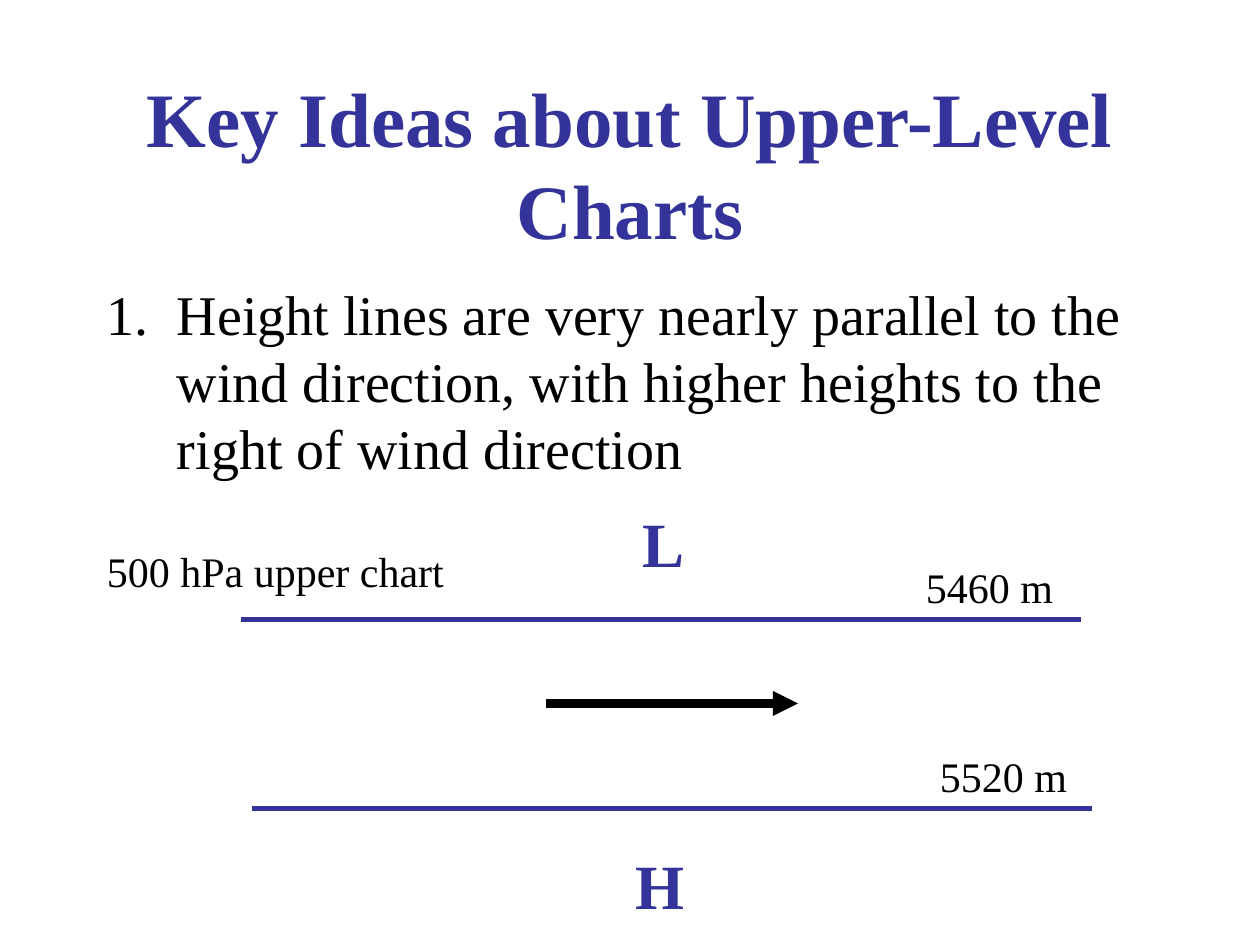
"""Build the slide on key ideas about upper-level charts."""
from dataclasses import dataclass

import lxml.etree
import pptx
import pptx.dml.color
import pptx.enum.shapes
import pptx.enum.text
import pptx.oxml.ns
import pptx.presentation
import pptx.shapes.connector
import pptx.slide
import pptx.text.text
import pptx.util

Pt = pptx.util.Pt
qn = pptx.oxml.ns.qn
Anchor = pptx.enum.text.MSO_ANCHOR
Align = pptx.enum.text.PP_ALIGN
Fit = pptx.enum.text.MSO_AUTO_SIZE
FONT = "Times New Roman"
COLORS = {"blue": "333399", "black": "000000"}


@dataclass
class Label:
    text: str
    left: float
    top: float
    width: float
    height: float
    size: float
    color: str = "black"
    bold: bool = False
    wrap: bool = False


@dataclass
class Line:
    left: float
    right: float
    top: float
    weight: float
    color: str
    arrow: bool = False


TITLE = Label("Key Ideas about Upper-Level Charts", 54, 48, 612, 90, 44, "blue", True, True)
IDEA = Label(
    "Height lines are very nearly parallel to the wind direction, "
    "with higher heights to the right of wind direction",
    54, 156, 630, 126, 32, wrap=True,
)
LABELS = [
    Label("L", 360, 285, 39, 51, 36, "blue", True),
    Label("H", 356, 480, 42.5, 51, 36, "blue", True),
    Label("5460 m", 522, 317.5, 88, 36.5, 24),
    Label("5520 m", 530, 425.5, 88, 36.5, 24),
    Label("500 hPa upper chart", 54, 308, 209, 36.5, 24),
]
LINES = [
    Line(138, 618, 354, 3.25, "blue"),
    Line(144, 624, 462, 3.25, "blue"),
    Line(312, 456, 402, 4.75, "black", True),
]


def tint(name: str) -> pptx.dml.color.RGBColor:
    """Return the named colour."""
    return pptx.dml.color.RGBColor.from_string(COLORS[name])


def write(slide: pptx.slide.Slide, label: Label) -> pptx.text.text.TextFrame:
    """Add one text box and return its frame."""
    box = slide.shapes.add_textbox(
        Pt(label.left), Pt(label.top), Pt(label.width), Pt(label.height)
    )
    frame = box.text_frame
    frame.word_wrap = label.wrap
    frame.auto_size = Fit.NONE if label.wrap else Fit.SHAPE_TO_FIT_TEXT
    run = frame.paragraphs[0].add_run()
    run.text = label.text
    run.font.name = FONT
    run.font.size = Pt(label.size)
    run.font.bold = label.bold
    run.font.color.rgb = tint(label.color)
    return frame


def number(para: pptx.text.text._Paragraph, indent: float) -> None:
    """Number a paragraph with a hanging indent."""
    props = para._p.get_or_add_pPr()
    props.set("marL", str(Pt(indent)))
    props.set("indent", str(-Pt(indent)))
    lxml.etree.SubElement(props, qn("a:buFont"), typeface=FONT)
    lxml.etree.SubElement(props, qn("a:buAutoNum"), type="arabicPeriod")


def draw(slide: pptx.slide.Slide, line: Line) -> pptx.shapes.connector.Connector:
    """Add one level line, with an arrowhead if asked."""
    link = slide.shapes.add_connector(
        pptx.enum.shapes.MSO_CONNECTOR.STRAIGHT,
        Pt(line.left), Pt(line.top), Pt(line.right), Pt(line.top),
    )
    link.line.width = Pt(line.weight)
    link.line.color.rgb = tint(line.color)
    if line.arrow:
        lxml.etree.SubElement(link.get_or_add_ln(), qn("a:tailEnd"), type="triangle")
    lxml.etree.SubElement(link._element.spPr, qn("a:effectLst"))
    return link


def main() -> None:
    """Build and save the slide."""
    deck = pptx.Presentation()
    deck.slide_width, deck.slide_height = Pt(720), Pt(540)
    slide = deck.slides.add_slide(deck.slide_layouts[6])
    title = write(slide, TITLE)
    title.vertical_anchor = Anchor.MIDDLE
    title.paragraphs[0].alignment = Align.CENTER
    number(write(slide, IDEA).paragraphs[0], 40)
    for line in LINES:
        draw(slide, line)
    for label in LABELS:
        write(slide, label)
    deck.save("out.pptx")


if __name__ == "__main__":
    main()
